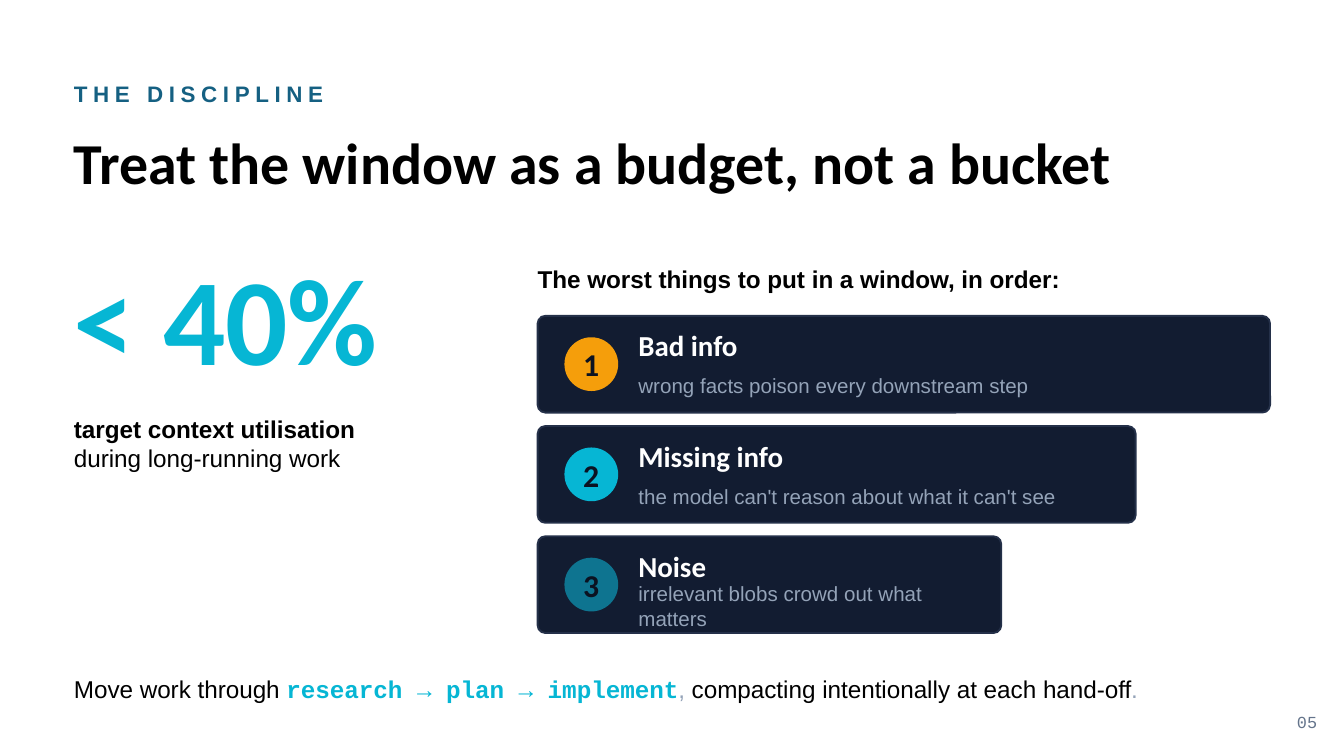
from pptx import Presentation
from pptx.dml.color import RGBColor
from pptx.enum.shapes import MSO_SHAPE
from pptx.enum.text import MSO_ANCHOR, PP_ALIGN
from pptx.util import Inches, Pt

ROUNDED = MSO_SHAPE.ROUNDED_RECTANGLE
OVAL = MSO_SHAPE.OVAL
MIDDLE = MSO_ANCHOR.MIDDLE
LEFT, CENTER, RIGHT = PP_ALIGN.LEFT, PP_ALIGN.CENTER, PP_ALIGN.RIGHT

COLUMNS = 100
MARGIN = 5.5
BLACK, WHITE, CYAN, MUTED = "000000", "FFFFFF", "06B6D4", "94A3B8"


def color(value):
    return RGBColor.from_string(value)


class Deck:
    formats = {
        "eyebrow": {"name": "Arial", "size": 12, "color": "156082", "bold": True},
        "title": {"name": "Calibri", "size": 31, "color": BLACK, "bold": True},
        "figure": {"name": "Calibri", "size": 66, "color": CYAN, "bold": True},
        "strong": {"name": "Arial", "size": 13, "color": BLACK, "bold": True},
        "body": {"name": "Arial", "size": 13, "color": BLACK, "bold": False},
        "punctuation": {"name": "Arial", "size": 13, "color": MUTED, "bold": False},
        "code": {"name": "Courier New", "size": 13, "color": CYAN, "bold": True},
        "badge": {"name": "Calibri", "size": 17, "color": "0B1221", "bold": True},
        "heading": {"name": "Calibri", "size": 15.5, "color": WHITE, "bold": True},
        "detail": {"name": "Arial", "size": 11, "color": MUTED, "bold": False},
        "page": {"name": "Courier New", "size": 9, "color": "64748B", "bold": False},
    }

    def __init__(self):
        self.presentation = Presentation()
        self.presentation.slide_width = Inches(10)
        self.presentation.slide_height = Inches(10) * 9 // 16
        self.unit = self.presentation.slide_width / COLUMNS
        self.slide = self.presentation.slides.add_slide(self.presentation.slide_layouts[6])
        background = self.slide.background.fill
        background.solid()
        background.fore_color.rgb = color(WHITE)

    def place(self, *lengths):
        return [round(length * self.unit) for length in lengths]

    def set_text(self, shape, lines, alignment=LEFT, spacing=0, wrap=True):
        frame = shape.text_frame
        settings = {"word_wrap": wrap, "vertical_anchor": MIDDLE}
        settings.update({f"margin_{side}": 0 for side in ("left", "right", "top", "bottom")})
        for name, value in settings.items():
            setattr(frame, name, value)
        for index, line in enumerate(lines):
            paragraph = frame.add_paragraph() if index else frame.paragraphs[0]
            paragraph.alignment = alignment
            for text, style in line:
                run = paragraph.add_run()
                run.text = text
                if spacing:
                    run._r.get_or_add_rPr().set("spc", str(spacing * 100))
                for name, value in self.formats[style].items():
                    if name == "color":
                        run.font.color.rgb = color(value)
                    else:
                        setattr(run.font, name, Pt(value) if name == "size" else value)

    def text(self, box, *lines, **options):
        self.set_text(self.slide.shapes.add_textbox(*self.place(*box)), lines, **options)

    def shape(self, kind, box, fill, line=None):
        shape = self.slide.shapes.add_shape(kind, *self.place(*box))
        shape.shadow.inherit = False
        shape.fill.solid()
        shape.fill.fore_color.rgb = color(fill)
        if line:
            shape.line.color.rgb = color(line)
            shape.line.width = Pt(1)
        else:
            shape.line.fill.background()
        return shape

    def card(self, row, width, number, accent, heading, detail):
        left = 40
        card = self.shape(ROUNDED, (left, row, width, 7.2), "121C31", "243049")
        card.adjustments[0] = 0.08
        badge = self.shape(OVAL, (left + 2, row + 1.6, 4, 4), accent)
        self.set_text(badge, [[(str(number), "badge")]], alignment=CENTER, wrap=False)
        self.text((left + 7.5, row + 0.6, 22, 3.2), [(heading, "heading")])
        self.text((left + 7.5, row + 3.7, width - 9, 3), [(detail, "detail")])


def main():
    deck = Deck()
    deck.text((MARGIN, 5.5, 89, 3), [("THE DISCIPLINE", "eyebrow")], spacing=3)
    deck.text((MARGIN, 8.5, 90, 7), [("Treat the window as a budget, not a bucket", "title")])
    deck.text((MARGIN, 18.5, 30, 10), [("< 40%", "figure")])
    deck.text(
        (MARGIN, 29.5, 31, 7),
        [("target context utilisation", "strong")],
        [("during long-running work", "body")],
    )
    deck.text((40, 19, 55, 3.5), [("The worst things to put in a window, in order:", "strong")])

    cards = [
        ("F59E0B", "Bad info", "wrong facts poison every downstream step"),
        (CYAN, "Missing info", "the model can't reason about what it can't see"),
        ("0E7490", "Noise", "irrelevant blobs crowd out what matters"),
    ]
    for index, content in enumerate(cards):
        deck.card(23.5 + 8.2 * index, 54.5 - 10 * index, index + 1, *content)

    deck.text(
        (MARGIN, 49.5, 90, 3.5),
        [
            ("Move work through ", "body"),
            ("research → plan → implement", "code"),
            (", ", "punctuation"),
            ("compacting intentionally at each hand-off", "body"),
            (".", "punctuation"),
        ],
    )
    deck.text((92, 52.2, 6, 3), [("05", "page")], alignment=RIGHT)
    deck.presentation.save("out.pptx")


if __name__ == "__main__":
    main()
